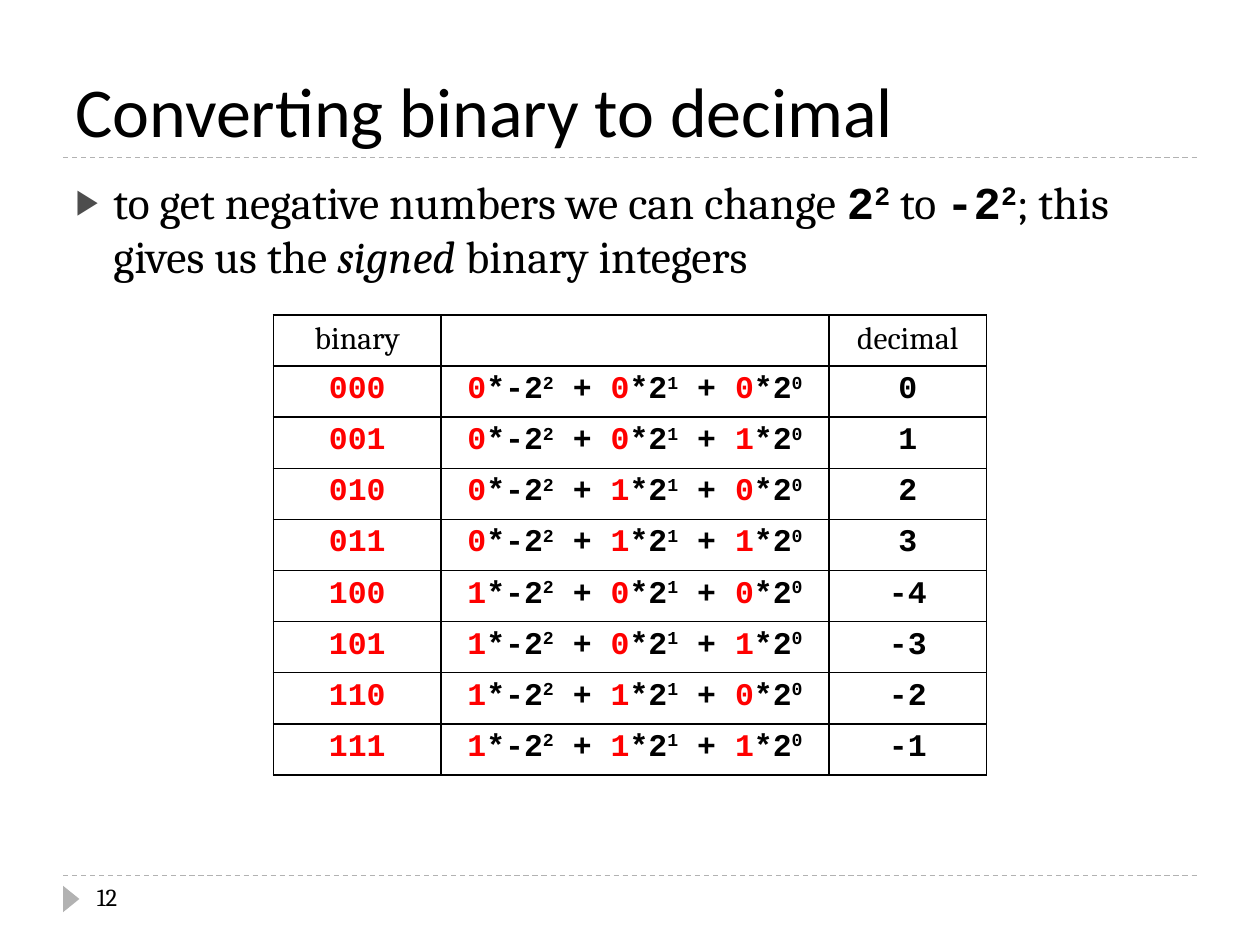
"""Build a slide that explains how signed binary integers convert to decimal."""
from lxml import etree
from pptx import Presentation
from pptx.dml.color import RGBColor
from pptx.enum.dml import MSO_LINE
from pptx.enum.shapes import MSO_CONNECTOR, MSO_SHAPE
from pptx.enum.text import MSO_ANCHOR, MSO_AUTO_SIZE, PP_ALIGN
from pptx.oxml import parse_xml
from pptx.oxml.ns import nsdecls, qn
from pptx.util import Inches, Pt

DASH = MSO_LINE.DASH
STRAIGHT = MSO_CONNECTOR.STRAIGHT
TRIANGLE = MSO_SHAPE.ISOSCELES_TRIANGLE
BOTTOM, TOP = MSO_ANCHOR.BOTTOM, MSO_ANCHOR.TOP
NO_FIT = MSO_AUTO_SIZE.NONE
LEFT, CENTER = PP_ALIGN.LEFT, PP_ALIGN.CENTER
SERIF, CODE = "Cambria", "Courier New"
BLACK, RED, GRAY, WHITE = "000000", "FF0000", "B2B2B2", "FFFFFF"
BITS = 3


def color(value):
    return RGBColor.from_string(value)


def add_run(paragraph, text, size, font=SERIF, fill=BLACK, italic=False, raised=False):
    run = paragraph.add_run()
    run.text = text
    run.font.size = Pt(size)
    run.font.name = font
    run.font.bold = font == CODE
    run.font.italic = italic
    run.font.color.rgb = color(fill)
    if raised:
        run.font._element.set("baseline", "30000")


presentation = Presentation()
presentation.slide_width = Inches(10)
presentation.slide_height = Inches(7.5)
slide = presentation.slides.add_slide(presentation.slide_layouts[1])
margin = Inches(0.5)
content_width = presentation.slide_width - 2 * margin

for rule_top in (Inches(6.95), Inches(1.25)):
    rule = slide.shapes.add_connector(
        STRAIGHT, margin, rule_top, margin + content_width, rule_top)
    rule.line.color.rgb = color(GRAY)
    rule.line.width = Pt(0.75)
    rule.line.dash_style = DASH
    etree.SubElement(rule._element.spPr, qn("a:effectLst"))

marker = slide.shapes.add_shape(
    TRIANGLE, Inches(0.46), Inches(7.07), Inches(0.21), Inches(0.13))
marker.rotation = 90
marker.shadow.inherit = False
marker.fill.solid()
marker.fill.fore_color.rgb = color(GRAY)
marker.line.fill.background()

title, body = slide.placeholders
for placeholder, top, height, anchor in (
        (title, 0.17, 1.08, BOTTOM), (body, 1.33, 5.4, TOP)):
    placeholder.left, placeholder.width = margin, content_width
    placeholder.top, placeholder.height = Inches(top), Inches(height)
    placeholder.text_frame.vertical_anchor = anchor
    placeholder.text_frame.auto_size = NO_FIT
    placeholder.text_frame.paragraphs[0].alignment = LEFT

add_run(title.text_frame.paragraphs[0], "Converting binary to decimal", 40, "Calibri")

statement = body.text_frame.paragraphs[0]
statement.space_before = Pt(6)
properties = statement._p.get_or_add_pPr()
properties.set("marL", str(Inches(0.3)))
properties.set("indent", str(-Inches(0.3)))
for bullet in ('<a:buClr {}><a:srgbClr val="4D4D4D"/></a:buClr>',
               '<a:buSzPct {} val="76000"/>',
               '<a:buChar {} char="▶"/>'):
    properties.append(parse_xml(bullet.format(nsdecls("a"))))
add_run(statement, "to get negative numbers we can change ", 26)
add_run(statement, "2", 26, CODE)
add_run(statement, "2", 26, CODE, raised=True)
add_run(statement, " to ", 26)
add_run(statement, "-2", 26, CODE)
add_run(statement, "2", 26, CODE, raised=True)
add_run(statement, "; this gives us the ", 26)
add_run(statement, "signed", 26, italic=True)
add_run(statement, " binary integers", 26)

page_number = slide.shapes.add_textbox(
    Inches(0.67), Inches(6.95), Inches(2.17), Inches(0.4))
page_number.text_frame.word_wrap = True
add_run(page_number.text_frame.paragraphs[0], "12", 14)

column_widths = (1.33, 3.08, 1.25)
row_count = 2 ** BITS + 1
table = slide.shapes.add_table(
    row_count, len(column_widths), Inches(2.17), Inches(2.5),
    Inches(sum(column_widths)), Inches(3.65)).table
for column, width in zip(table.columns, column_widths):
    column.width = Inches(width)

for cell in table.iter_cells():
    cell.fill.solid()
    cell.fill.fore_color.rgb = color(WHITE)
    cell.text_frame.paragraphs[0].alignment = CENTER
    for position, side in enumerate("LRTB"):
        cell._tc.get_or_add_tcPr().insert(position, parse_xml(
            f'<a:ln{side} {nsdecls("a")} w="{Pt(1)}"><a:solidFill>'
            f'<a:srgbClr val="{BLACK}"/></a:solidFill></a:ln{side}>'))

add_run(table.cell(0, 0).text_frame.paragraphs[0], "binary", 18)
add_run(table.cell(0, 2).text_frame.paragraphs[0], "decimal", 18)

for number in range(2 ** BITS):
    binary, expansion, decimal = (
        cell.text_frame.paragraphs[0] for cell in table.rows[number + 1].cells)
    digits = f"{number:0{BITS}b}"
    add_run(binary, digits, 18, CODE, RED)
    for index, digit in enumerate(digits):
        if index:
            add_run(expansion, " + ", 18, CODE)
        add_run(expansion, digit, 18, CODE, RED)
        add_run(expansion, "*2" if index else "*-2", 18, CODE)
        add_run(expansion, str(BITS - 1 - index), 18, CODE, raised=True)
    signed_value = number - 2 ** BITS * int(digits[0])
    add_run(decimal, str(signed_value), 18, CODE)

presentation.save("out.pptx")
